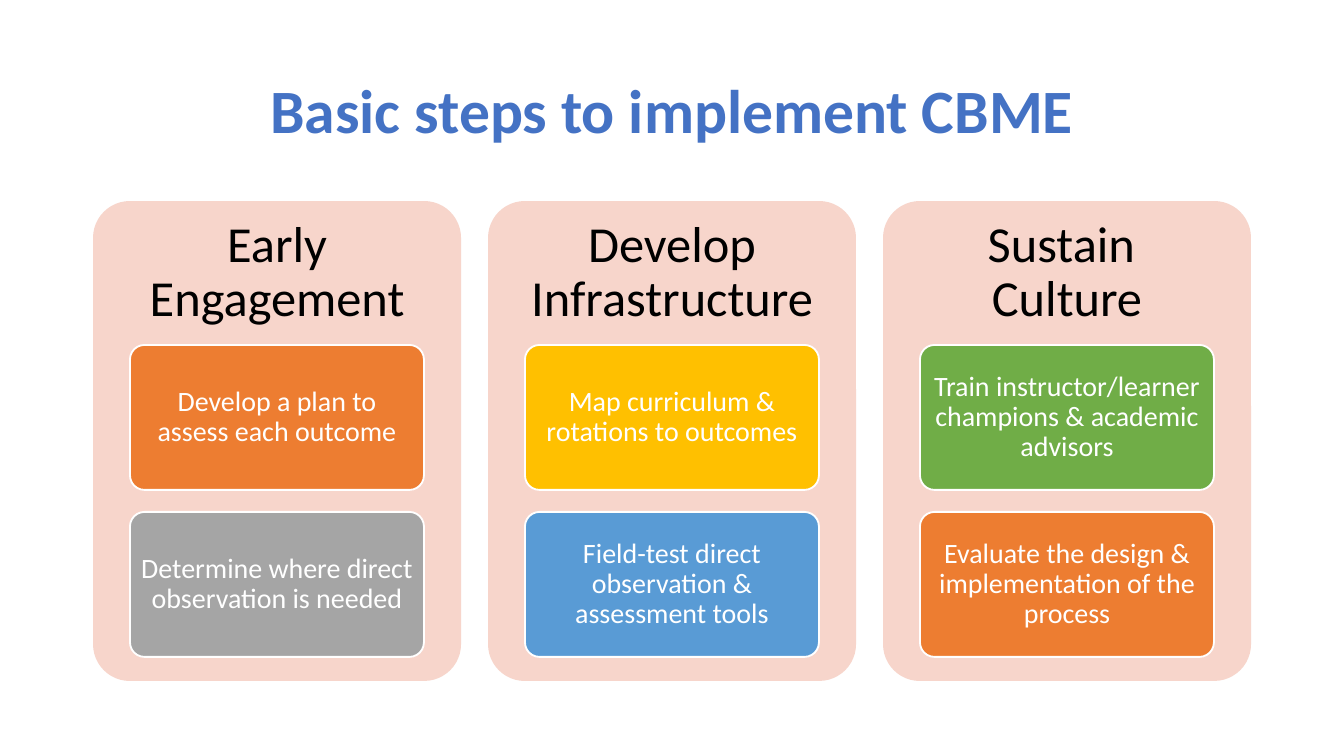
from pptx import Presentation
from pptx import util as u
from pptx.dml.color import RGBColor
from pptx.enum import shapes, text

WIDTH, HEIGHT = 1344, 756
SCALE = u.Inches(10) / WIDTH
COLORS = {
    "title": "4472C4", "panel": "F7D5CB", "black": "000000", "white": "FFFFFF",
    "orange": "ED7D31", "gray": "A5A5A5", "gold": "FFC000", "blue": "599BD5",
    "green": "70AD47",
}
STEPS = [
    (["Early Engagement"],
     [("Develop a plan to assess each outcome", "orange"),
      ("Determine where direct observation is needed", "gray")]),
    (["Develop Infrastructure"],
     [("Map curriculum & rotations to outcomes", "gold"),
      ("Field-test direct observation & assessment tools", "blue")]),
    (["Sustain ", "Culture"],
     [("Train instructor/learner champions & academic advisors", "green"),
      ("Evaluate the design & implementation of the process", "orange")]),
]


def px(length):
    return u.Emu(round(length * SCALE))


class Deck:
    """Holds the slide style and draws elements on the current slide."""

    font = "Calibri"
    line_spacing = 0.9
    corner = 0.1

    def __init__(self):
        self.presentation = Presentation()
        self.presentation.slide_width = px(WIDTH)
        self.presentation.slide_height = px(HEIGHT)
        self.slide = self.presentation.slides.add_slide(self.presentation.slide_layouts[6])

    def color(self, name):
        return RGBColor.from_string(COLORS[name])

    def label(self, box, lines, size, color, inset, bold=False):
        frame = self.slide.shapes.add_textbox(*map(px, box)).text_frame
        frame.word_wrap = True
        frame.vertical_anchor = text.MSO_ANCHOR.MIDDLE
        frame.margin_left = frame.margin_right = px(inset[0])
        frame.margin_top = frame.margin_bottom = px(inset[1])
        frame.text = "\n".join(lines)
        for paragraph in frame.paragraphs:
            paragraph.alignment = text.PP_ALIGN.CENTER
            paragraph.line_spacing = self.line_spacing
            paragraph.font.name = self.font
            paragraph.font.size = u.Pt(size)
            paragraph.font.bold = bold
            paragraph.font.color.rgb = self.color(color)

    def rounded(self, box, fill, outline=None):
        panel = self.slide.shapes.add_shape(shapes.MSO_SHAPE.ROUNDED_RECTANGLE, *map(px, box))
        panel.adjustments[0] = self.corner
        panel.shadow.inherit = False
        panel.fill.solid()
        panel.fill.fore_color.rgb = self.color(fill)
        if outline:
            panel.line.color.rgb = self.color(outline)
            panel.line.width = u.Pt(1)
        else:
            panel.line.fill.background()

    def card(self, box, wording, fill):
        left, top, width, height = box
        self.rounded(box, fill, "white")
        inner = (left + 4, top + 4, width - 8, height - 8)
        self.label(inner, [wording], 15, "white", (5, 4))


def main():
    deck = Deck()
    margin, panel_width, panel_top = 93, 368, 201
    deck.label((margin, 40, WIDTH - 2 * margin, 147), ["Basic steps to implement CBME"],
               33, "title", (9, 5), bold=True)
    panel_step = (WIDTH - 2 * margin - panel_width) // (len(STEPS) - 1)
    card_width, card_height, card_step = 294, 145, 167
    for column, (heading, cards) in enumerate(STEPS):
        left = margin + column * panel_step
        deck.rounded((left, panel_top, panel_width, 480), "panel")
        deck.label((left, panel_top, panel_width, 144), heading, 27, "black", (15, 15))
        card_left = left + (panel_width - card_width) // 2
        for row, (wording, fill) in enumerate(cards):
            card_top = panel_top + 144 + row * card_step
            deck.card((card_left, card_top, card_width, card_height), wording, fill)
    deck.presentation.save("out.pptx")


if __name__ == "__main__":
    main()
